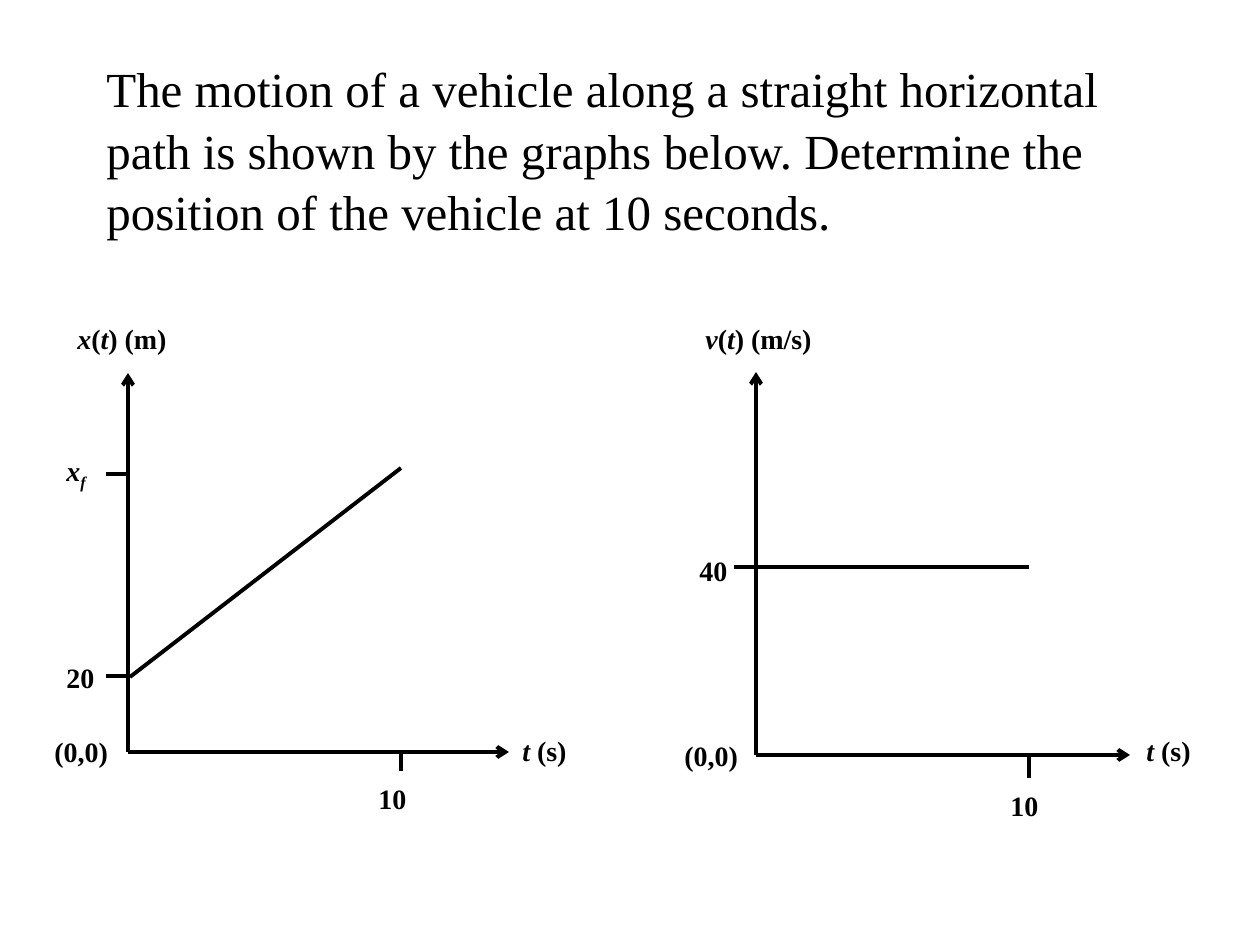
from dataclasses import dataclass

from lxml.etree import SubElement
from pptx import Presentation
from pptx.dml.color import RGBColor
from pptx.enum.shapes import MSO_CONNECTOR as Connector
from pptx.enum.text import MSO_ANCHOR as Anchor, MSO_AUTO_SIZE as AutoSize
from pptx.oxml.ns import qn
from pptx.util import Pt

PX = 914400 / 126


def emu(*lengths):
    return [round(length * PX) for length in lengths]


@dataclass(frozen=True)
class Theme:
    font: str = "Times New Roman"
    ink: RGBColor = RGBColor(0, 0, 0)
    question_size: int = 28
    label_size: int = 16
    line_width: float = 2.25


class Sheet:
    def __init__(self, theme, slide):
        self.theme = theme
        self.slide = slide

    def style(self, paragraph, size, bold=False):
        font = paragraph.font
        font.name, font.size, font.bold = self.theme.font, Pt(size), bold
        font.color.rgb = self.theme.ink

    def question(self, text, left, top, width, height):
        box = self.slide.shapes.add_textbox(*emu(left, top, width, height))
        frame = box.text_frame
        frame.word_wrap = True
        frame.auto_size = AutoSize.SHAPE_TO_FIT_TEXT
        frame.vertical_anchor = Anchor.MIDDLE
        frame.text = text
        frame.paragraphs[0].line_spacing = 1.05
        self.style(frame.paragraphs[0], self.theme.question_size)

    def label(self, group, markup, left, top, width, height):
        """Add a bold label; *...* is italic, and a leading _ makes a subscript."""
        frame = group.shapes.add_textbox(*emu(left, top, width, height)).text_frame
        frame.word_wrap = True
        paragraph = frame.paragraphs[0]
        self.style(paragraph, self.theme.label_size, bold=True)
        for index, part in enumerate(markup.split("*")):
            if not part:
                continue
            run = paragraph.add_run()
            run.text = part.lstrip("_")
            run.font.italic = index % 2 == 1
            if part.startswith("_"):
                run._r.get_or_add_rPr().set("baseline", "-25000")

    def line(self, group, start, end, arrow=False):
        line = group.shapes.add_connector(Connector.STRAIGHT, *emu(*start, *end))
        line.line.color.rgb = self.theme.ink
        line.line.width = Pt(self.theme.line_width)
        if arrow:
            SubElement(line.line._get_or_add_ln(), qn("a:tailEnd"), type="arrow")
        SubElement(line._element.spPr, qn("a:effectLst"))

    def graph(self, origin, axis_end, time_tick, value_ticks, curve, labels):
        """Draw axes, ticks, curve and labels; time_tick is (x, length)."""
        group = self.slide.shapes.add_group_shape()
        x, y = origin
        right, top = axis_end
        self.line(group, origin, (right, y), arrow=True)
        self.line(group, origin, (x, top), arrow=True)
        tick_x, tick_length = time_tick
        self.line(group, (tick_x, y + tick_length), (tick_x, y))
        for tick_y in value_ticks:
            self.line(group, (x - 22, tick_y), (x, tick_y))
        self.line(group, *curve)
        for markup, *place in labels:
            self.label(group, markup, *place)


def main():
    deck = Presentation()
    deck.slide_width, deck.slide_height = emu(1260, 945)
    sheet = Sheet(Theme(), deck.slides.add_slide(deck.slide_layouts[6]))

    sheet.question(
        "The motion of a vehicle along a straight horizontal path is shown by "
        "the graphs below. Determine the position of the vehicle at 10 seconds.",
        94, 53, 1040, 190)

    sheet.graph(
        origin=(128, 752), axis_end=(509, 373), time_tick=(401, 19),
        value_ticks=(474, 676), curve=((130, 677), (401, 468)),
        labels=[
            ("*x*(*t*) (m)", 65, 315, 150, 44),
            ("*x**_f*", 54, 447, 57, 47),
            ("20", 54, 654, 81, 44),
            ("(0,0)", 42, 728, 92, 58),
            ("10", 366, 775, 69, 54),
            ("*t* (s)", 510, 727, 98, 37),
        ])

    sheet.graph(
        origin=(756, 755), axis_end=(1130, 372), time_tick=(1029, 23),
        value_ticks=(567,), curve=((751, 567), (1029, 567)),
        labels=[
            ("*v*(*t*) (m/s)", 693, 315, 158, 54),
            ("40", 687, 547, 91, 64),
            ("(0,0)", 672, 732, 105, 48),
            ("10", 998, 782, 63, 60),
            ("*t *(s)", 1134, 727, 81, 67),
        ])

    deck.save("out.pptx")


if __name__ == "__main__":
    main()
